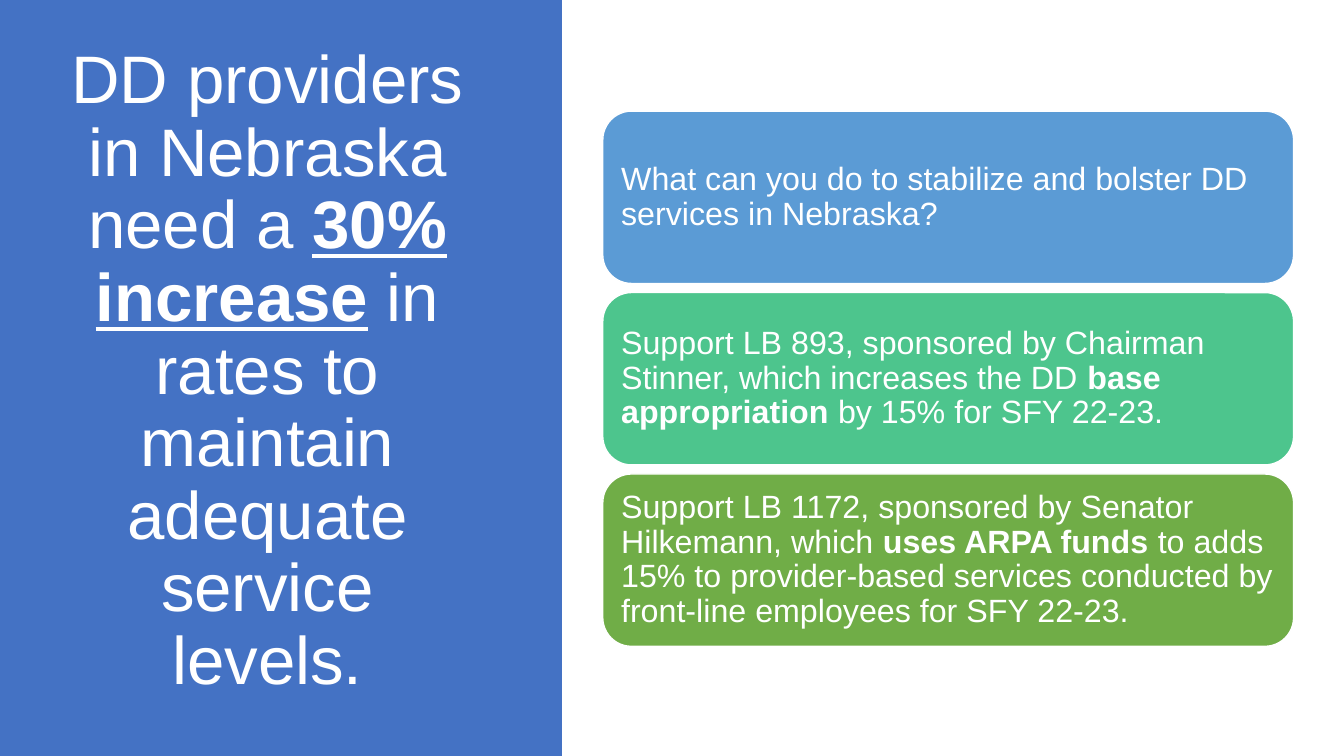
from dataclasses import dataclass

from pptx import Presentation
from pptx import util as u
from pptx.dml.color import RGBColor
from pptx.enum import shapes, text

WHITE = RGBColor(0xFF, 0xFF, 0xFF)
NAVY = RGBColor(0x44, 0x72, 0xC4)
BLUE = RGBColor(0x5B, 0x9B, 0xD5)
TEAL = RGBColor(0x4D, 0xC5, 0x8D)
GREEN = RGBColor(0x70, 0xAD, 0x47)

WIDE = u.Inches(13.33)
HIGH = u.Inches(7.5)
FONT = "Arial"


@dataclass(frozen=True)
class Run:
    words: str
    bold: bool = False
    lined: bool = False


@dataclass(frozen=True)
class Box:
    left: float
    top: float
    width: float
    height: float

    def place(self) -> tuple[int, int, int, int]:
        return (round(self.left * WIDE), round(self.top * HIGH),
                round(self.width * WIDE), round(self.height * HIGH))


@dataclass(frozen=True)
class Card:
    fill: RGBColor
    runs: tuple[Run, ...]


PANEL = Box(0, 0, 0.418, 1)
TITLE = Box(0.043, 0.091, 0.312, 0.803)
FIRST = Box(0.4485, 0.147, 0.514, 0.228)
PITCH = 0.24

HEAD = (
    Run("DD providers in Nebraska need a "),
    Run("30% increase", bold=True, lined=True),
    Run(" in rates to maintain adequate service levels."),
)

CARDS = (
    Card(BLUE, (
        Run("What can you do to stabilize and bolster DD services in Nebraska?"),
    )),
    Card(TEAL, (
        Run("Support LB 893, sponsored by Chairman Stinner, which increases the DD "),
        Run("base appropriation ", bold=True),
        Run("by 15% for SFY 22-23."),
    )),
    Card(GREEN, (
        Run("Support LB 1172, sponsored by Senator Hilkemann, which "),
        Run("uses ARPA funds ", bold=True),
        Run("to adds 15% to provider-based services conducted by "
            "front-line employees for SFY 22-23."),
    )),
)


def write(shape, runs: tuple[Run, ...], *, size: int, align, pad: float) -> None:
    frame = shape.text_frame
    frame.word_wrap = True
    frame.auto_size = text.MSO_AUTO_SIZE.NONE
    frame.vertical_anchor = text.MSO_ANCHOR.MIDDLE
    frame.margin_left = frame.margin_right = u.Inches(0.1)
    frame.margin_top = frame.margin_bottom = u.Inches(pad)
    para = frame.paragraphs[0]
    para.alignment = align
    para.line_spacing = 0.9
    for item in runs:
        run = para.add_run()
        run.text = item.words
        font = run.font
        font.name = FONT
        font.size = u.Pt(size)
        font.bold = item.bold
        font.underline = item.lined
        font.color.rgb = WHITE


def draw(slide, kind, box: Box, fill: RGBColor):
    shape = slide.shapes.add_shape(kind, *box.place())
    shape.shadow.inherit = False
    shape.fill.solid()
    shape.fill.fore_color.rgb = fill
    shape.line.fill.background()
    return shape


def main() -> None:
    deck = Presentation()
    deck.slide_width, deck.slide_height = WIDE, HIGH
    slide = deck.slides.add_slide(deck.slide_layouts.get_by_name("Title Only"))

    title = slide.shapes.title
    title.left, title.top, title.width, title.height = TITLE.place()
    write(title, HEAD, size=48, align=text.PP_ALIGN.CENTER, pad=0.05)

    panel = draw(slide, shapes.MSO_SHAPE.RECTANGLE, PANEL, NAVY)
    title.element.addprevious(panel.element)

    for row, card in enumerate(CARDS):
        box = Box(FIRST.left, FIRST.top + row * PITCH, FIRST.width, FIRST.height)
        shape = draw(slide, shapes.MSO_SHAPE.ROUNDED_RECTANGLE, box, card.fill)
        shape.line.color.rgb = WHITE
        shape.line.width = u.Pt(1)
        write(shape, card.runs, size=23, align=text.PP_ALIGN.LEFT, pad=0.1)

    deck.save("out.pptx")


if __name__ == "__main__":
    main()
